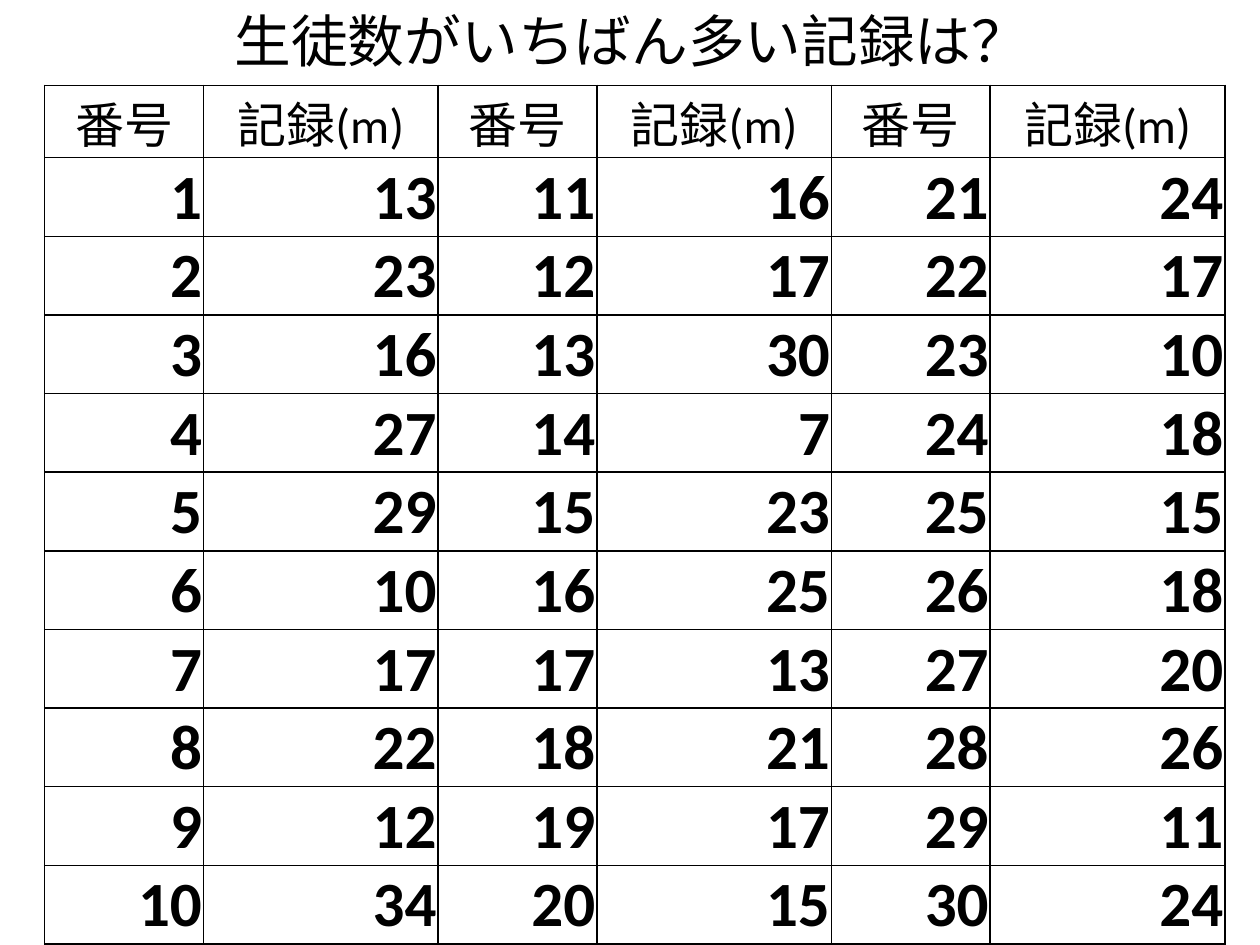
from dataclasses import dataclass

from lxml import etree
from pptx import Presentation
from pptx.dml.color import RGBColor
from pptx.enum.text import MSO_ANCHOR, MSO_AUTO_SIZE, PP_ALIGN
from pptx.oxml.ns import qn
from pptx.util import Cm, Pt

CENTER, RIGHT = PP_ALIGN.CENTER, PP_ALIGN.RIGHT
MIDDLE = MSO_ANCHOR.MIDDLE
NO_AUTOFIT = MSO_AUTO_SIZE.NONE


@dataclass(frozen=True)
class Theme:
    font: str = "Calibri"
    ink: str = "000000"
    title_size: float = 32.4
    header_size: float = 28
    body_size: float = 36
    border_width: float = 1


THEME = Theme()
TITLE = "生徒数がいちばん多い記録は？"
HEADERS = ("番号", "記録(m)")
THROWS = [
    13, 23, 16, 27, 29, 10, 17, 22, 12, 34,
    16, 17, 30, 7, 23, 25, 13, 21, 17, 15,
    24, 17, 10, 18, 15, 18, 20, 26, 11, 24,
]
GROUP_SIZE = 10
GROUPS = len(THROWS) // GROUP_SIZE
COL_WIDTHS = (Cm(3.2), Cm(4.73))
HEADER_HEIGHT, ROW_HEIGHT = Cm(1.4), Cm(1.58)


def format_text(tf, size, align, bold=False):
    p = tf.paragraphs[0]
    p.alignment = align
    for r in p.runs:
        r.font.name = THEME.font
        r.font.size = Pt(size)
        r.font.bold = bold
        r.font.color.rgb = RGBColor.from_string(THEME.ink)


def add_borders(cell):
    tc_pr = cell._tc.get_or_add_tcPr()
    for i, side in enumerate(("a:lnL", "a:lnR", "a:lnT", "a:lnB")):
        ln = etree.Element(qn(side), w=str(Pt(THEME.border_width)))
        fill = etree.SubElement(ln, qn("a:solidFill"))
        etree.SubElement(fill, qn("a:srgbClr"), val=THEME.ink)
        tc_pr.insert(i, ln)


def fill_cell(cell, text, size, align, bold=False):
    cell.text_frame.text = text
    format_text(cell.text_frame, size, align, bold)
    cell.vertical_anchor = MIDDLE
    cell.margin_left = cell.margin_right = cell.margin_top = Cm(0.03)
    cell.margin_bottom = 0
    cell.fill.background()
    add_borders(cell)


def place_title(s, left, top, width, height):
    sp = s.shapes.title
    sp.left, sp.top, sp.width, sp.height = left, top, width, height
    tf = sp.text_frame
    tf.text = TITLE
    tf.auto_size = NO_AUTOFIT
    tf.vertical_anchor = MIDDLE
    format_text(tf, THEME.title_size, CENTER)


def add_record_table(s, left, top):
    """Number the throws down each pair of columns, ten to a pair."""
    width = GROUPS * sum(COL_WIDTHS)
    height = HEADER_HEIGHT + GROUP_SIZE * ROW_HEIGHT
    table = s.shapes.add_table(GROUP_SIZE + 1, GROUPS * len(HEADERS),
                               left, top, width, height).table
    table.first_row = table.horz_banding = False
    for c, column in enumerate(table.columns):
        column.width = COL_WIDTHS[c % len(HEADERS)]
        fill_cell(table.cell(0, c), HEADERS[c % len(HEADERS)],
                  THEME.header_size, CENTER)
    for i, row in enumerate(table.rows):
        row.height = ROW_HEIGHT if i else HEADER_HEIGHT
    for i, throw in enumerate(THROWS):
        group, row = divmod(i, GROUP_SIZE)
        for k, value in enumerate((i + 1, throw)):
            fill_cell(table.cell(row + 1, group * len(HEADERS) + k),
                      str(value), THEME.body_size, RIGHT, bold=True)


def main():
    prs = Presentation()
    prs.slide_width, prs.slide_height = Cm(25.4), Cm(19.05)
    s = prs.slides.add_slide(prs.slide_layouts[5])
    place_title(s, Cm(1.3), Cm(0), Cm(22.86), Cm(1.6))
    add_record_table(s, Cm(0.9), Cm(1.72))
    prs.save("out.pptx")


if __name__ == "__main__":
    main()
